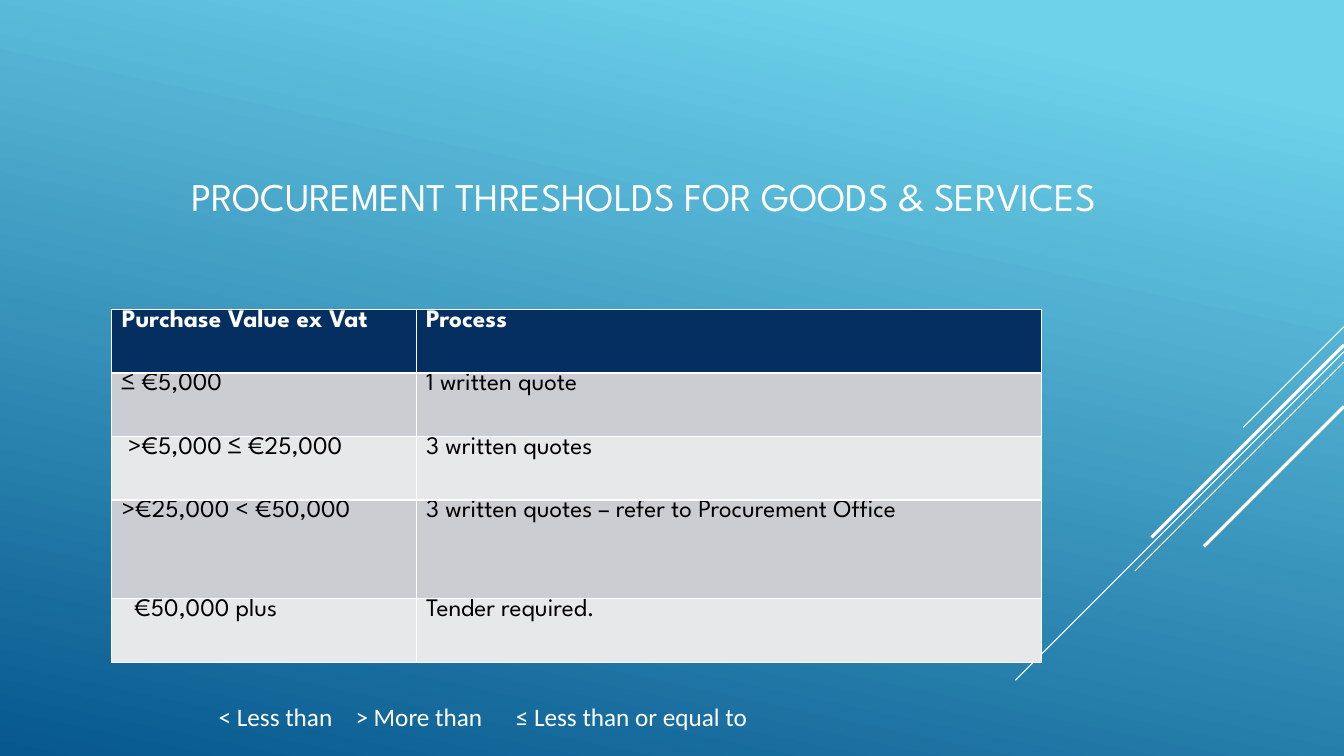
from lxml import etree
from pptx import Presentation
from pptx.dml.color import RGBColor
from pptx.enum.shapes import MSO_CONNECTOR
from pptx.enum.text import MSO_ANCHOR, PP_ALIGN
from pptx.oxml.ns import qn
from pptx.util import Cm, Pt

WHITE = RGBColor(0xFF, 0xFF, 0xFF)
BLACK = RGBColor(0x00, 0x00, 0x00)
NAVY = RGBColor(0x05, 0x2F, 0x61)
GREY = RGBColor(0xCC, 0xCD, 0xD2)
PALE_GREY = RGBColor(0xE7, 0xE8, 0xEA)
SKY_BLUE = RGBColor(0x6E, 0xD2, 0xEB)
DEEP_BLUE = RGBColor(0x06, 0x58, 0x8E)

HEADING_FONT = "League Spartan"
SLIDE_WIDTH = 33.87


def format_runs(paragraph, font_name, size, color, bold=False):
    for run in paragraph.runs:
        run.font.name = font_name
        run.font.size = Pt(size)
        run.font.color.rgb = color
        run.font.bold = bold


presentation = Presentation()
presentation.slide_width = Cm(SLIDE_WIDTH)
presentation.slide_height = Cm(19.05)
slide = presentation.slides.add_slide(presentation.slide_layouts[6])

# Background gradient
background = slide.background.fill
background.gradient()
background.gradient_angle = 258
for stop, position, color in zip(
    background.gradient_stops, (0.1, 1), (SKY_BLUE, DEEP_BLUE)
):
    stop.position = position
    stop.color.rgb = color

# Diagonal lines at 45 degrees from the right edge: top, length across, width
diagonals = [
    (8.23, 2.54, 0.75),
    (8.86, 8.28, 0.75),
    (9.12, 5.27, 0.75),
    (8.69, 4.85, 2.25),
    (10.24, 3.53, 2.25),
]
for top, span, width in diagonals:
    diagonal = slide.shapes.add_connector(
        MSO_CONNECTOR.STRAIGHT,
        Cm(SLIDE_WIDTH), Cm(top), Cm(SLIDE_WIDTH - span), Cm(top + span),
    )
    diagonal.line.color.rgb = WHITE
    diagonal.line.width = Pt(width)
    etree.SubElement(diagonal.element.spPr, qn("a:effectLst"))

# Title
title = slide.shapes.add_textbox(Cm(2.24), Cm(2.13), Cm(27.94), Cm(5.59))
title.text_frame.word_wrap = True
title.text_frame.vertical_anchor = MSO_ANCHOR.MIDDLE
title_paragraph = title.text_frame.paragraphs[0]
title_paragraph.text = "PROCUREMENT THRESHOLDS FOR GOODS & SERVICES"
title_paragraph.alignment = PP_ALIGN.CENTER
format_runs(title_paragraph, HEADING_FONT, 28, WHITE)

# Threshold table: value, process, row height, left margin of the value
thresholds = [
    ("Purchase Value ex Vat", "Process", 1.6, 0.25),
    ("≤ €5,000", "1 written quote", 1.6, 0.25),
    (">€5,000 ≤ €25,000", "3 written quotes", 1.6, 0.41),
    (">€25,000 < €50,000", "3 written quotes – refer to Procurement Office", 2.49, 0.25),
    ("€50,000 plus", "Tender required.", 1.6, 0.57),
]
table = slide.shapes.add_table(
    len(thresholds), 2, Cm(2.82), Cm(7.8), Cm(23.42), Cm(8.89)
).table
table.columns[0].width = Cm(7.67)
table.columns[1].width = Cm(15.75)
for row_index, (value, process, height, value_margin) in enumerate(thresholds):
    table.rows[row_index].height = Cm(height)
    is_header = row_index == 0
    row_fill = NAVY if is_header else (PALE_GREY, GREY)[row_index % 2]
    for column_index, text in enumerate((value, process)):
        cell = table.cell(row_index, column_index)
        cell.fill.solid()
        cell.fill.fore_color.rgb = row_fill
        cell.margin_left = Cm(value_margin if column_index == 0 else 0.25)
        cell.margin_top = cell.margin_bottom = Cm(0)
        paragraph = cell.text_frame.paragraphs[0]
        paragraph.text = text
        format_runs(paragraph, HEADING_FONT, 18, WHITE if is_header else BLACK, is_header)

# Key to the symbols, spaced with tab stops
key = slide.shapes.add_textbox(Cm(5.26), Cm(17.55), Cm(14.81), Cm(1.8))
key.text_frame.word_wrap = True
key_paragraph = key.text_frame.paragraphs[0]
key_paragraph.text = "< Less than\t> More than\t≤ Less than or equal to"
format_runs(key_paragraph, "Calibri", 18, WHITE)
key_properties = key_paragraph.runs[0].font  # formatted above
paragraph_properties = etree.Element(qn("a:pPr"))
tab_list = etree.SubElement(paragraph_properties, qn("a:tabLst"))
for tab_position in (3.45, 7.49):
    etree.SubElement(tab_list, qn("a:tab"), pos=str(Cm(tab_position)), algn="l")
key.text_frame.paragraphs[0].runs[0].font.italic = False
key.element.find(".//" + qn("a:p")).insert(0, paragraph_properties)

presentation.save("out.pptx")
